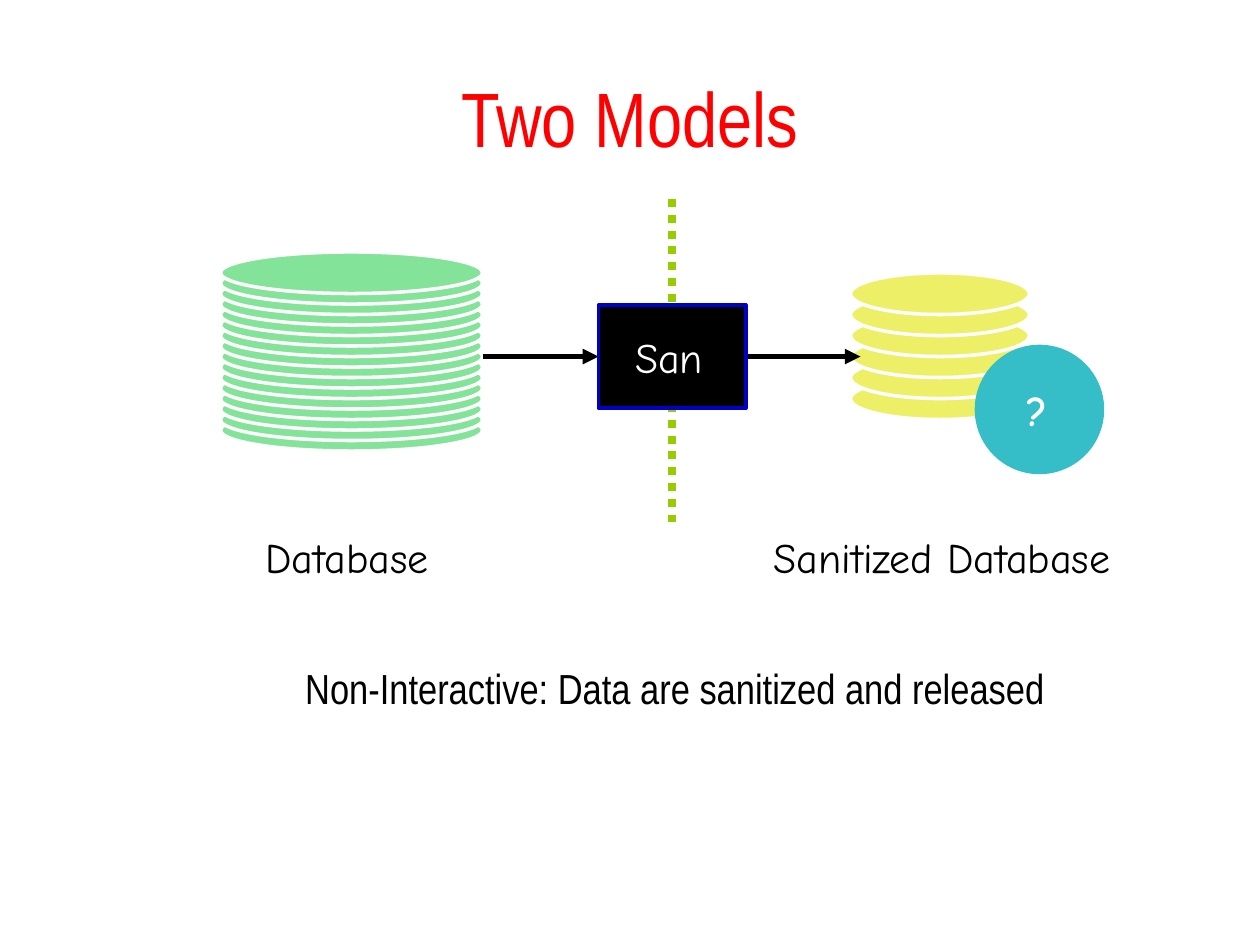
"""Build the "Two Models" slide: a database sanitized once and then released."""
from dataclasses import dataclass

from lxml import etree
from pptx import Presentation
from pptx.dml.color import RGBColor
from pptx.enum.dml import MSO_LINE
from pptx.enum.shapes import MSO_CONNECTOR, MSO_SHAPE
from pptx.enum.text import MSO_ANCHOR, PP_ALIGN
from pptx.oxml.ns import qn
from pptx.util import Inches, Pt

STRAIGHT = MSO_CONNECTOR.STRAIGHT
ELLIPSE, RECTANGLE = MSO_SHAPE.OVAL, MSO_SHAPE.RECTANGLE
CENTER, MIDDLE, TOP = PP_ALIGN.CENTER, MSO_ANCHOR.MIDDLE, MSO_ANCHOR.TOP
DOTTED = MSO_LINE.ROUND_DOT
LEFT_SIDE, RIGHT_SIDE = 1, 3


@dataclass(frozen=True)
class Theme:
    black: RGBColor = RGBColor.from_string("000000")
    white: RGBColor = RGBColor.from_string("FFFFFF")
    red: RGBColor = RGBColor.from_string("FF0000")
    green: RGBColor = RGBColor.from_string("83E398")
    yellow: RGBColor = RGBColor.from_string("EDF066")
    teal: RGBColor = RGBColor.from_string("36BEC8")
    lime: RGBColor = RGBColor.from_string("99CC00")
    blue: RGBColor = RGBColor.from_string("0000C6")
    narrow: str = "Arial Narrow"
    comic: str = "Comic Neue"
    title_size: Pt = Pt(44)
    body_size: Pt = Pt(24)
    outline: Pt = Pt(2)
    arrow: Pt = Pt(3)
    divider: Pt = Pt(4.5)


theme = Theme()


def add_text(shapes, text, left, top, width, height, *, font=theme.comic,
             size=theme.body_size, color=theme.black, bold=False, anchor=TOP, wrap=False):
    box = shapes.add_textbox(Inches(left), Inches(top), Inches(width), Inches(height))
    frame = box.text_frame
    frame.word_wrap = wrap
    frame.vertical_anchor = anchor
    para = frame.paragraphs[0]
    para.alignment = CENTER
    span = para.add_run()
    span.text = text
    span.font.name = font
    span.font.size = size
    span.font.bold = bold
    span.font.color.rgb = color


def add_shape(shapes, kind, left, top, width, height, fill, line):
    shape = shapes.add_shape(kind, Inches(left), Inches(top), Inches(width), Inches(height))
    shape.shadow.inherit = False
    shape.fill.solid()
    shape.fill.fore_color.rgb = fill
    shape.line.color.rgb = line
    shape.line.width = theme.outline
    return shape


deck = Presentation()
deck.slide_width, deck.slide_height = Inches(10), Inches(7.5)
page = deck.slides.add_slide(deck.slide_layouts[6])

add_text(page.shapes, "Two Models", 0.5, 0.3, 9, 1.25, font=theme.narrow,
         size=theme.title_size, color=theme.red, anchor=MIDDLE, wrap=True)

for left, lowest, width, count, step, fill in (
    (1.75, 3.25, 2.08, 16, 1 / 12, theme.green),
    (6.75, 3, 1.42, 6, 1 / 6, theme.yellow),
):
    stack = page.shapes.add_group_shape()
    for level in range(count):
        add_shape(stack.shapes, ELLIPSE, left, lowest - level * step, width, 0.33,
                  fill, theme.white)

query = page.shapes.add_group_shape()
add_shape(query.shapes, ELLIPSE, 7.75, 2.75, 1, 1, theme.teal, theme.teal)
add_text(query.shapes, "?", 8.02, 3, 0.42, 0.53, color=theme.white, bold=True)

divider, arrow_in, arrow_out = [
    page.shapes.add_connector(STRAIGHT, *map(Inches, ends))
    for ends in ((5.33, 1.58, 5.33, 4.17), (3.83, 2.83, 4.75, 2.83), (5.92, 2.83, 6.83, 2.83))
]
sanitizer = add_shape(page.shapes, RECTANGLE, 4.75, 2.42, 1.17, 0.82, theme.black, theme.blue)
arrow_in.end_connect(sanitizer, LEFT_SIDE)
arrow_out.begin_connect(sanitizer, RIGHT_SIDE)

for connector, color, width in (
    (divider, theme.lime, theme.divider),
    (arrow_in, theme.black, theme.arrow),
    (arrow_out, theme.black, theme.arrow),
):
    connector.line.color.rgb = color
    connector.line.width = width
    etree.SubElement(connector.element.spPr, qn("a:effectLst"))
divider.line.dash_style = DOTTED
for arrow in (arrow_in, arrow_out):
    etree.SubElement(arrow.line._get_or_add_ln(), qn("a:tailEnd"), type="triangle")

add_text(page.shapes, "San", 4.92, 2.58, 0.78, 0.5, color=theme.white)
add_text(page.shapes, "Database", 1.93, 4.17, 1.65, 0.5)
add_text(page.shapes, "Sanitized Database", 5.86, 4.17, 3.23, 0.5)
add_text(page.shapes, "Non-Interactive: Data are sanitized and released",
         2.31, 5.21, 6.09, 0.5, font=theme.narrow)

deck.save("out.pptx")
